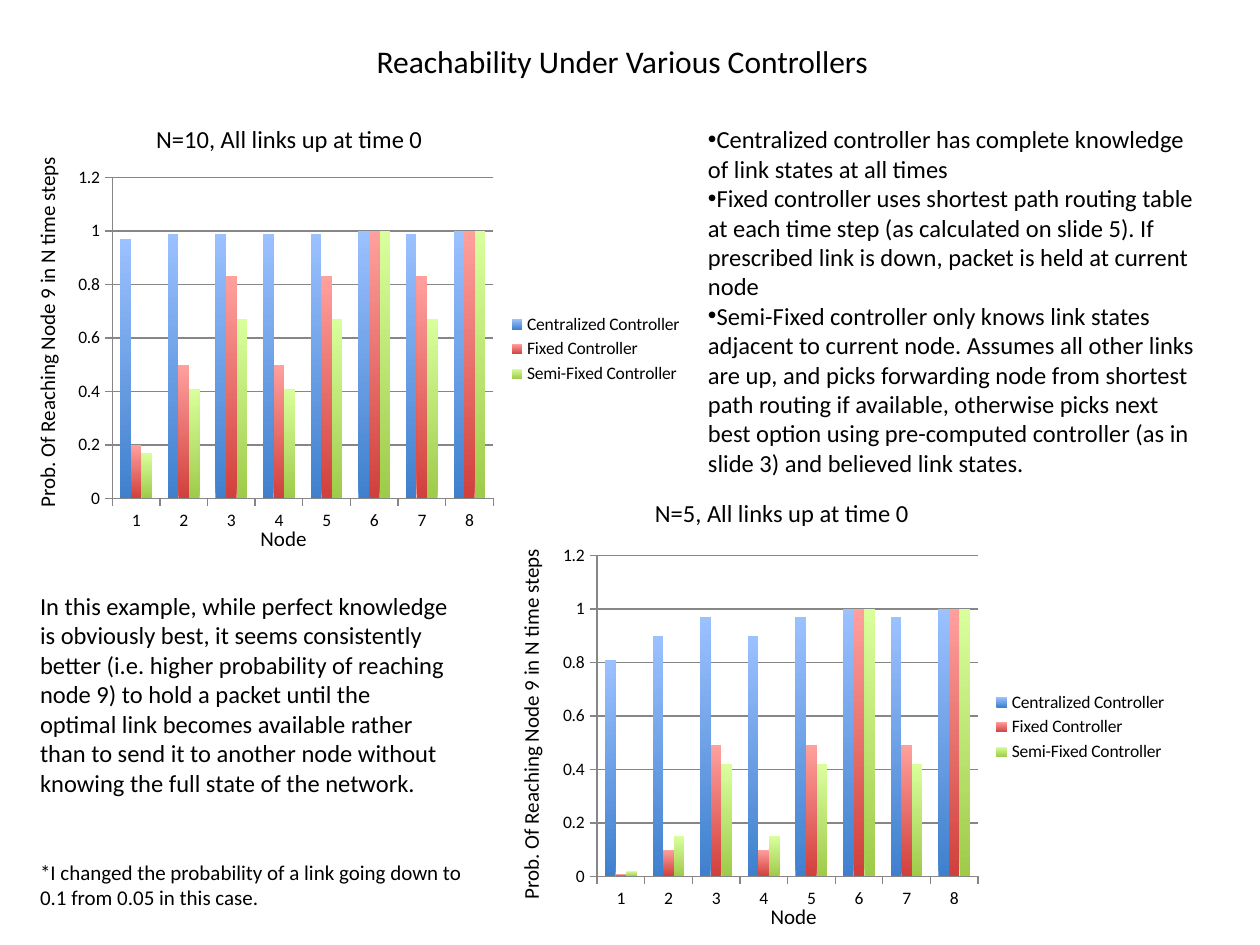
from dataclasses import dataclass

import lxml.etree
import pptx
import pptx.chart.data
import pptx.dml.color
import pptx.enum.chart
import pptx.enum.text
import pptx.oxml.ns
import pptx.util

Pt = pptx.util.Pt
RGB = pptx.dml.color.RGBColor
ALIGN = pptx.enum.text.PP_ALIGN


@dataclass(frozen=True)
class Theme:
    font: str = "Calibri"
    ink: str = "000000"
    rule: str = "868686"
    title: float = 18
    body: float = 14
    label: float = 12
    chart: float = 10
    gradients: tuple = (("3F80CD", "9BC1FF"), ("D0403C", "FFA09D"), ("9FCB4A", "D9FF9C"))


@dataclass(frozen=True)
class Note:
    left: float
    top: float
    width: float
    height: float
    paragraphs: tuple[str, ...]
    size: float
    align: ALIGN = ALIGN.LEFT
    rotation: float = 0
    bulleted: bool = False


@dataclass(frozen=True)
class ReachChart:
    left: float
    top: float
    values: tuple[tuple[float, ...], ...]


THEME = Theme()
CHART_WIDTH, CHART_HEIGHT = 360, 216
NODES = [str(node) for node in range(1, 9)]
CONTROLLERS = ("Centralized Controller", "Fixed Controller", "Semi-Fixed Controller")
AXIS_TITLE = "Prob. Of Reaching Node 9 in N time steps"

CHARTS = (
    ReachChart(37.5, 91.5, (
        (0.97, 0.99, 0.99, 0.99, 0.99, 1, 0.99, 1),
        (0.2, 0.5, 0.83, 0.5, 0.83, 1, 0.83, 1),
        (0.17, 0.41, 0.67, 0.41, 0.67, 1, 0.67, 1))),
    ReachChart(314.5, 307.5, (
        (0.81, 0.9, 0.97, 0.9, 0.97, 1, 0.97, 1),
        (0.01, 0.1, 0.49, 0.1, 0.49, 1, 0.49, 1),
        (0.02, 0.15, 0.42, 0.15, 0.42, 1, 0.42, 1))),
)

NOTES = (
    Note(64.8, 67.5, 201, 24.2, ("N=10, All links up at time 0",), THEME.body, ALIGN.CENTER),
    Note(342, 281, 209.5, 24.2, ("N=5, All links up at time 0",), THEME.body, ALIGN.CENTER),
    Note(106, 296.5, 112, 21.8, ("Node",), THEME.label, ALIGN.CENTER),
    Note(397.5, 512.5, 112, 21.8, ("Node",), THEME.label, ALIGN.CENTER),
    Note(-81.2, 178, 216, 21.8, (AXIS_TITLE,), THEME.label, rotation=270),
    Note(195.3, 402, 216, 21.8, (AXIS_TITLE,), THEME.label, rotation=270),
    Note(397.5, 67.5, 299.5, 211, (
        "Centralized controller has complete knowledge of link states at all times",
        "Fixed controller uses shortest path routing table at each time step (as calculated "
        "on slide 5). If prescribed link is down, packet is held at current node",
        "Semi-Fixed controller only knows link states adjacent to current node. Assumes all "
        "other links are up, and picks forwarding node from shortest path routing if available, "
        "otherwise picks next best option using pre-computed controller (as in slide 3) and "
        "believed link states.",
    ), THEME.body, bulleted=True),
    Note(15.8, 334.2, 250, 126, (
        "In this example, while perfect knowledge is obviously best, it seems consistently "
        "better (i.e. higher probability of reaching node 9) to hold a packet until the optimal "
        "link becomes available rather than to send it to another node without knowing the full "
        "state of the network.",
    ), THEME.body),
    Note(15.8, 487.5, 262, 36, (
        "*I changed the probability of a link going down to 0.1 from 0.05 in this case.",
    ), THEME.label),
)


def style_font(font, size: float) -> None:
    font.name = THEME.font
    font.size = Pt(size)
    font.color.rgb = RGB.from_string(THEME.ink)


def add_bullet(para) -> None:
    properties = para._p.get_or_add_pPr()
    properties.set("marL", "0")
    properties.set("indent", "0")
    for tag, attribute, value in (("a:buFont", "typeface", "Arial"), ("a:buChar", "char", "•")):
        element = lxml.etree.SubElement(properties, pptx.oxml.ns.qn(tag))
        element.set(attribute, value)


def write_note(box, note: Note) -> None:
    box.left, box.top = Pt(note.left), Pt(note.top)
    box.width, box.height = Pt(note.width), Pt(note.height)
    box.rotation = note.rotation
    frame = box.text_frame
    frame.word_wrap = True
    frame.auto_size = pptx.enum.text.MSO_AUTO_SIZE.SHAPE_TO_FIT_TEXT
    frame.vertical_anchor = pptx.enum.text.MSO_ANCHOR.TOP
    for index, text in enumerate(note.paragraphs):
        para = frame.add_paragraph() if index else frame.paragraphs[0]
        para.alignment = note.align
        if note.bulleted:
            add_bullet(para)
        span = para.add_run()
        span.text = text
        style_font(span.font, note.size)


def style_axis(axis) -> None:
    axis.major_tick_mark = pptx.enum.chart.XL_TICK_MARK.OUTSIDE
    axis.minor_tick_mark = pptx.enum.chart.XL_TICK_MARK.NONE
    style_line(axis.format.line)


def style_line(line) -> None:
    line.color.rgb = RGB.from_string(THEME.rule)
    line.width = Pt(0.75)


def add_reach_chart(page, reach: ReachChart) -> None:
    data = pptx.chart.data.CategoryChartData()
    data.categories = NODES
    for name, values in zip(CONTROLLERS, reach.values):
        data.add_series(name, values)
    chart = page.shapes.add_chart(
        pptx.enum.chart.XL_CHART_TYPE.COLUMN_CLUSTERED, Pt(reach.left), Pt(reach.top),
        Pt(CHART_WIDTH), Pt(CHART_HEIGHT), data).chart
    style_font(chart.font, THEME.chart)
    chart.has_title = False
    chart.has_legend = True
    chart.legend.position = pptx.enum.chart.XL_LEGEND_POSITION.RIGHT
    chart.legend.include_in_layout = False
    style_axis(chart.category_axis)
    style_axis(chart.value_axis)
    chart.value_axis.minimum_scale = 0
    chart.value_axis.maximum_scale = 1.2
    chart.value_axis.major_unit = 0.2
    style_line(chart.value_axis.major_gridlines.format.line)
    plot = chart.plots[0]
    plot.gap_width = 150
    plot.overlap = 0
    plot.vary_by_categories = False
    for series, colors in zip(plot.series, THEME.gradients):
        fill = series.format.fill
        fill.gradient()
        fill.gradient_angle = 90
        for stop, color in zip(fill.gradient_stops, colors):
            stop.color.rgb = RGB.from_string(color)


def main() -> None:
    deck = pptx.Presentation()
    deck.slide_width, deck.slide_height = Pt(720), Pt(540)
    page = deck.slides.add_slide(deck.slide_layouts.get_by_name("Title Only"))
    write_note(page.shapes.title, Note(
        37.5, 20.2, 636.5, 29, ("Reachability Under Various Controllers",),
        THEME.title, ALIGN.CENTER))
    for reach in CHARTS:
        add_reach_chart(page, reach)
    for note in NOTES:
        box = page.shapes.add_textbox(Pt(note.left), Pt(note.top), Pt(note.width), Pt(note.height))
        write_note(box, note)
    deck.save("out.pptx")


if __name__ == "__main__":
    main()
